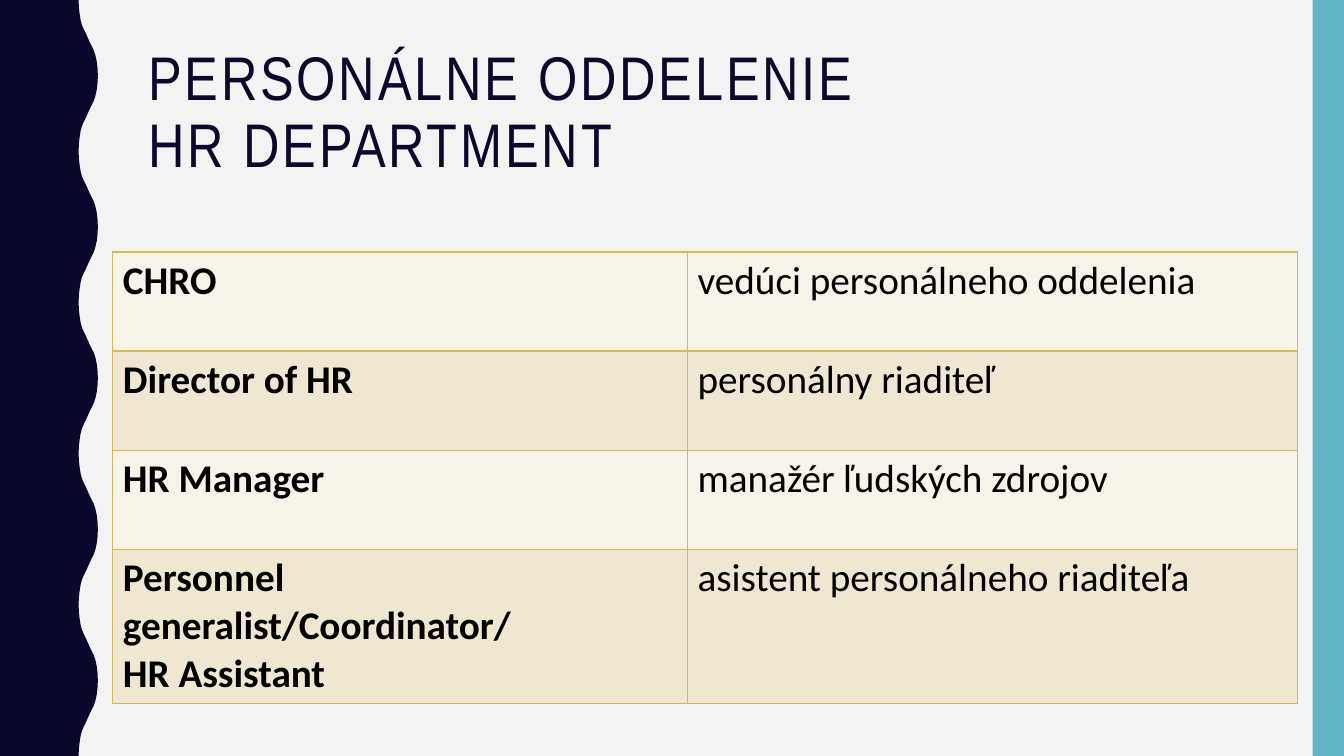
from lxml import etree
from pptx import Presentation
from pptx.dml.color import RGBColor
from pptx.enum.shapes import MSO_SHAPE
from pptx.enum.text import MSO_ANCHOR, PP_ALIGN
from pptx.oxml.ns import qn
from pptx.util import Inches, Pt

RECT = MSO_SHAPE.RECTANGLE
TOP = MSO_ANCHOR.TOP
LEFT = PP_ALIGN.LEFT

HUES = {
    "page": "F3F3F2", "navy": "0B082E", "teal": "62B4C6", "gold": "D3BA55",
    "light": "F7F3E9", "sand": "EFE7D1", "ink": "000000",
}
TITLE = ["PERSONÁLNE ODDELENIE", "HR DEPARTMENT"]
ROLES = [
    (["CHRO"], ["vedúci personálneho oddelenia"]),
    (["Director of HR"], ["personálny riaditeľ"]),
    (["HR Manager"], ["manažér ľudských zdrojov"]),
    (["Personnel generalist/Coordinator/", "HR Assistant"],
     ["asistent personálneho riaditeľa"]),
]
# One swell of the wavy edge, as (column, row) on the grid
SWELL = [
    (5.85, 0), (5.87, 0.93), (5.93, 1.87), (6, 2.67), (6.1, 3.33),
    (6.23, 3.87), (6.38, 4.4), (6.53, 5), (6.68, 5.6), (6.83, 6.13),
    (6.98, 6.67), (7.1, 7.33), (7.2, 8.13), (7.26, 9.07), (7.28, 10),
]


class Deck:
    """Style and current slide; lengths are in a grid of 100 columns and 100 rows."""

    def __init__(self):
        self.prs = Presentation()
        self.prs.slide_width = Inches(13.33)
        self.prs.slide_height = Inches(7.5)
        self.slide = self.prs.slides.add_slide(self.prs.slide_layouts[5])
        self.paint(self.slide.background.fill, "page")

    def x(self, cols):
        return round(self.prs.slide_width * cols / 100)

    def y(self, rows):
        return round(self.prs.slide_height * rows / 100)

    def box(self, left, top, width, height):
        return self.x(left), self.y(top), self.x(width), self.y(height)

    def paint(self, fill, hue):
        fill.solid()
        fill.fore_color.rgb = RGBColor.from_string(HUES[hue])

    def plain(self, shape, hue):
        """Give a shape a flat fill with no line or shadow."""
        self.paint(shape.fill, hue)
        shape.line.fill.background()
        shape.shadow.inherit = False

    def font(self, para, name, size, hue, bold=False):
        font = para.font
        font.name, font.size, font.bold = name, Pt(size), bold
        font.color.rgb = RGBColor.from_string(HUES[hue])

    def bar(self, area, hue):
        self.plain(self.slide.shapes.add_shape(RECT, *self.box(*area)), hue)

    def wave(self, swell, count, hue):
        """Fill from the left edge to a wavy line of mirrored swells."""
        edge = []
        for i in range(count):
            half = swell if i % 2 == 0 else [(c, 10 - r) for c, r in swell[::-1]]
            edge += [(c, r + 10 * i) for c, r in half]
        points = [(self.x(c), self.y(r)) for c, r in edge + [(0, 100)]]
        build = self.slide.shapes.build_freeform(0, 0)
        build.add_line_segments(points, close=True)
        self.plain(build.convert_to_shape(), hue)

    def title(self, area, lines):
        shape = self.slide.shapes.title
        shape.left, shape.top, shape.width, shape.height = self.box(*area)
        frame = shape.text_frame
        frame.word_wrap = True
        frame.vertical_anchor = TOP
        para = frame.paragraphs[0]
        para.alignment, para.line_spacing = LEFT, 0.9
        for i, line in enumerate(lines):
            if i:
                para.add_line_break()
            run = para.add_run()
            run.text = line
            run.font._element.set("spc", "200")
        self.font(para, "Arial Narrow", 44, "navy")

    def rule(self, cell, hue):
        """Draw a one-point border on all four sides of a cell."""
        props = cell._tc.get_or_add_tcPr()
        for side in ("a:lnL", "a:lnR", "a:lnT", "a:lnB"):
            line = etree.SubElement(props, qn(side), w=str(Pt(1)))
            fill = etree.SubElement(line, qn("a:solidFill"))
            etree.SubElement(fill, qn("a:srgbClr"), val=HUES[hue])

    def table(self, area, cols, rows, data):
        frame = self.slide.shapes.add_table(len(rows), len(cols), *self.box(*area))
        table = frame.table
        table.first_row = table.horz_banding = False
        for col, width in zip(table.columns, cols):
            col.width = self.x(width)
        for r, (height, record) in enumerate(zip(rows, data)):
            table.rows[r].height = self.y(height)
            for c, lines in enumerate(record):
                cell = table.cell(r, c)
                self.rule(cell, "gold")
                self.paint(cell.fill, "sand" if r % 2 else "light")
                cell.text = "\n".join(lines)
                for para in cell.text_frame.paragraphs:
                    self.font(para, "Calibri", 28, "ink", bold=c == 0)


def main():
    deck = Deck()
    deck.wave(SWELL, 10, "navy")
    deck.bar((97.67, 0, 2.33, 100), "teal")
    deck.title((10.28, 5.6, 83.5, 21.73), TITLE)
    deck.table((8.4, 33.33, 88.15, 59.73), [42.76, 45.39],
               [13.11] * 3 + [20.4], ROLES)
    deck.prs.save("out.pptx")


if __name__ == "__main__":
    main()
